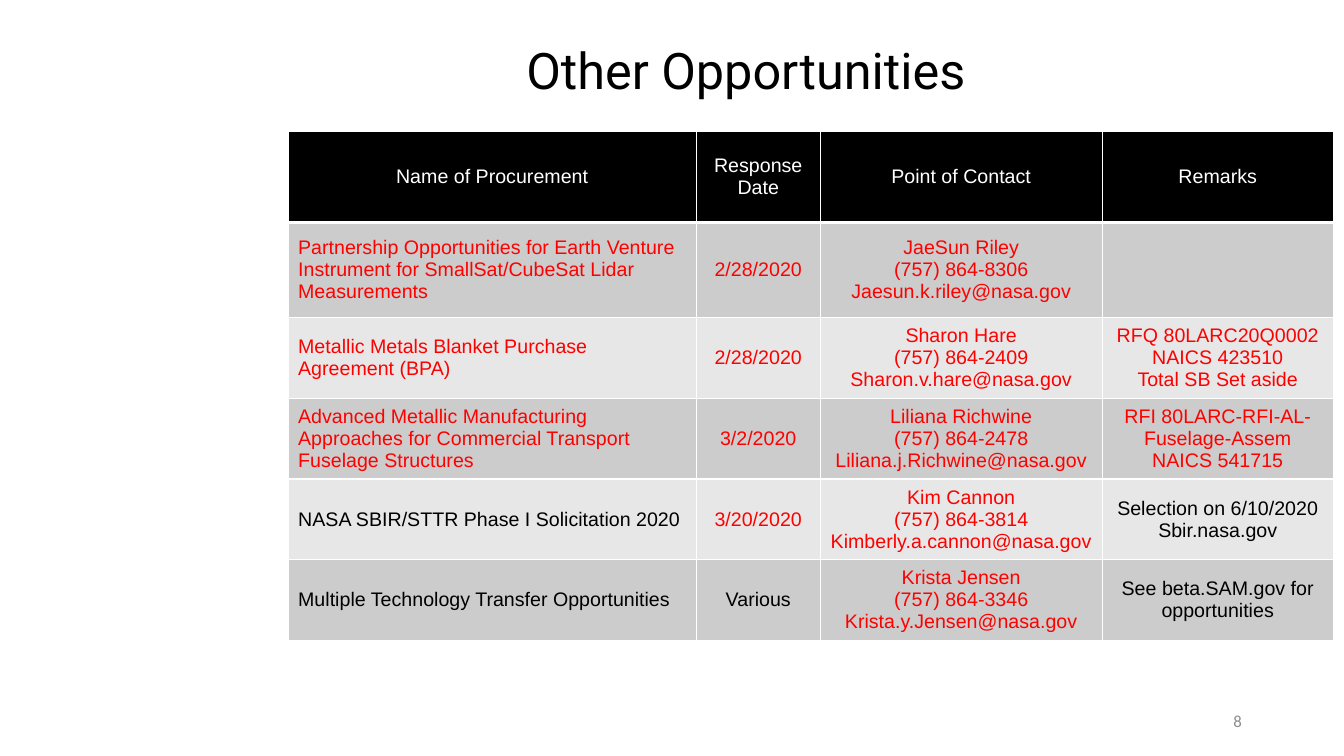
from lxml import etree
from pptx import Presentation
from pptx.dml.color import RGBColor
from pptx.enum.text import MSO_ANCHOR, PP_ALIGN
from pptx.oxml.ns import qn
from pptx.util import Cm, Pt

LEFT, CENTER, RIGHT = PP_ALIGN.LEFT, PP_ALIGN.CENTER, PP_ALIGN.RIGHT
MIDDLE = MSO_ANCHOR.MIDDLE

COLORS = {
    "black": "000000",
    "white": "FFFFFF",
    "red": "FF0000",
    "dark_band": "CCCCCC",
    "light_band": "E7E7E7",
    "page_number": "8C8C8C",
}

TITLE = "Other Opportunities"
PAGE_NUMBER = "8"
HEADERS = ["Name of Procurement", "Response Date", "Point of Contact", "Remarks"]
OPPORTUNITIES = [
    [
        ("red", ["Partnership Opportunities for Earth Venture Instrument for SmallSat/CubeSat Lidar Measurements"]),
        ("red", ["2/28/2020"]),
        ("red", ["JaeSun Riley", "(757) 864-8306", "Jaesun.k.riley@nasa.gov"]),
        ("red", []),
    ],
    [
        ("red", ["Metallic Metals Blanket Purchase Agreement (BPA)"]),
        ("red", ["2/28/2020"]),
        ("red", ["Sharon Hare", "(757) 864-2409", "Sharon.v.hare@nasa.gov"]),
        ("red", ["RFQ 80LARC20Q0002", "NAICS 423510", "Total SB Set aside"]),
    ],
    [
        ("red", ["Advanced Metallic Manufacturing Approaches for Commercial Transport Fuselage Structures"]),
        ("red", ["3/2/2020"]),
        ("red", ["Liliana Richwine", "(757) 864-2478", "Liliana.j.Richwine@nasa.gov"]),
        ("red", ["RFI 80LARC-RFI-AL-Fuselage-Assem", "NAICS 541715"]),
    ],
    [
        ("black", ["NASA SBIR/STTR Phase I Solicitation 2020"]),
        ("red", ["3/20/2020"]),
        ("red", ["Kim Cannon", "(757) 864-3814", "Kimberly.a.cannon@nasa.gov"]),
        ("black", ["Selection on 6/10/2020", "Sbir.nasa.gov"]),
    ],
    [
        ("black", ["Multiple Technology Transfer Opportunities"]),
        ("black", ["Various"]),
        ("red", ["Krista Jensen", "(757) 864-3346", "Krista.y.Jensen@nasa.gov"]),
        ("black", ["See beta.SAM.gov for opportunities"]),
    ],
]

COLUMN_WIDTHS = [10.29, 3.12, 7.11, 5.82]
ROW_HEIGHTS = [2.31, 2.39] + [1.92] * 4
TABLE_LEFT, TABLE_TOP = 7.26, 3.3


def write_lines(frame, lines, font_name, size, color, alignment):
    for index, line in enumerate(lines):
        paragraph = frame.add_paragraph() if index else frame.paragraphs[0]
        paragraph.alignment = alignment
        run = paragraph.add_run()
        run.text = line
        run.font.name = font_name
        run.font.size = Pt(size)
        run.font.bold = False
        run.font.color.rgb = RGBColor.from_string(COLORS[color])


def add_label(slide, box, text, font_name, size, color, alignment):
    frame = slide.shapes.add_textbox(*(Cm(length) for length in box)).text_frame
    frame.word_wrap = True
    frame.vertical_anchor = MIDDLE
    write_lines(frame, [text], font_name, size, color, alignment)
    return frame


def add_borders(cell, bottom_width):
    properties = cell._tc.get_or_add_tcPr()
    for side, width in (("L", 1), ("R", 1), ("T", 1), ("B", bottom_width)):
        line = etree.SubElement(properties, qn("a:ln" + side), w=str(Pt(width)))
        fill = etree.SubElement(line, qn("a:solidFill"))
        etree.SubElement(fill, qn("a:srgbClr"), val=COLORS["white"])


def add_opportunity_table(slide):
    rows = [[("white", [header]) for header in HEADERS]] + OPPORTUNITIES
    table = slide.shapes.add_table(
        len(rows), len(HEADERS), Cm(TABLE_LEFT), Cm(TABLE_TOP),
        Cm(sum(COLUMN_WIDTHS)), Cm(sum(ROW_HEIGHTS)),
    ).table
    for column, width in zip(table.columns, COLUMN_WIDTHS):
        column.width = Cm(width)
    for row, height in zip(table.rows, ROW_HEIGHTS):
        row.height = Cm(height)

    for row_index, row in enumerate(rows):
        is_header = row_index == 0
        band = "black" if is_header else ("light_band", "dark_band")[row_index % 2]
        for column_index, (color, lines) in enumerate(row):
            cell = table.cell(row_index, column_index)
            add_borders(cell, 3 if is_header else 1)
            cell.fill.solid()
            cell.fill.fore_color.rgb = RGBColor.from_string(COLORS[band])
            cell.vertical_anchor = MIDDLE
            alignment = LEFT if column_index == 0 and not is_header else CENTER
            write_lines(cell.text_frame, lines, "Arial", 14, color, alignment)


def main():
    presentation = Presentation()
    presentation.slide_width = Cm(33.87)
    presentation.slide_height = Cm(19.05)
    slide = presentation.slides.add_slide(presentation.slide_layouts[6])

    title = add_label(slide, (4.55, 0.76, 28.5, 2.16), TITLE, "Roboto", 36, "black", CENTER)
    title.paragraphs[0].line_spacing = 0.9
    add_opportunity_table(slide)
    add_label(slide, (23.93, 17.65, 7.62, 1.02), PAGE_NUMBER, "Calibri", 12, "page_number", RIGHT)
    presentation.save("out.pptx")


if __name__ == "__main__":
    main()
